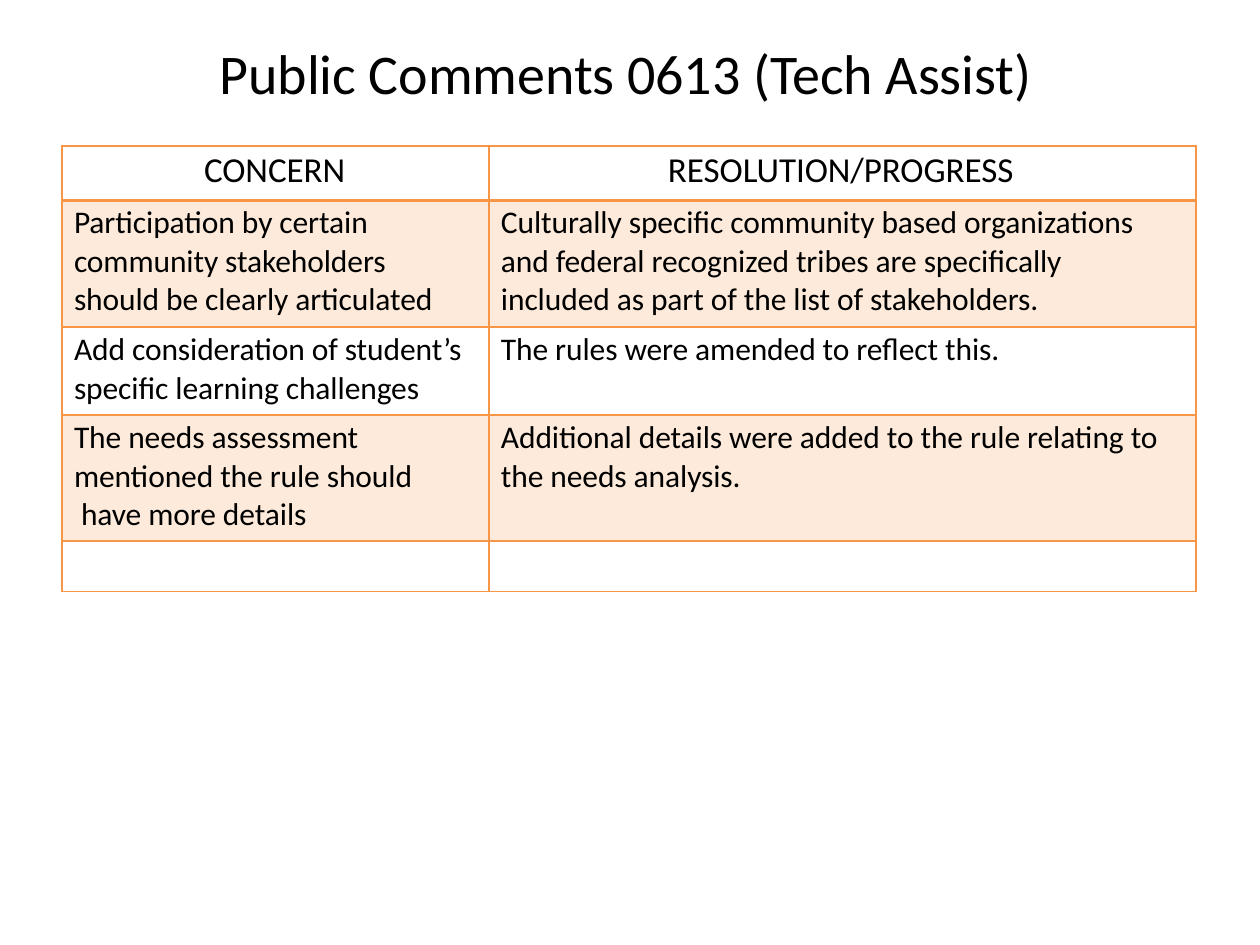
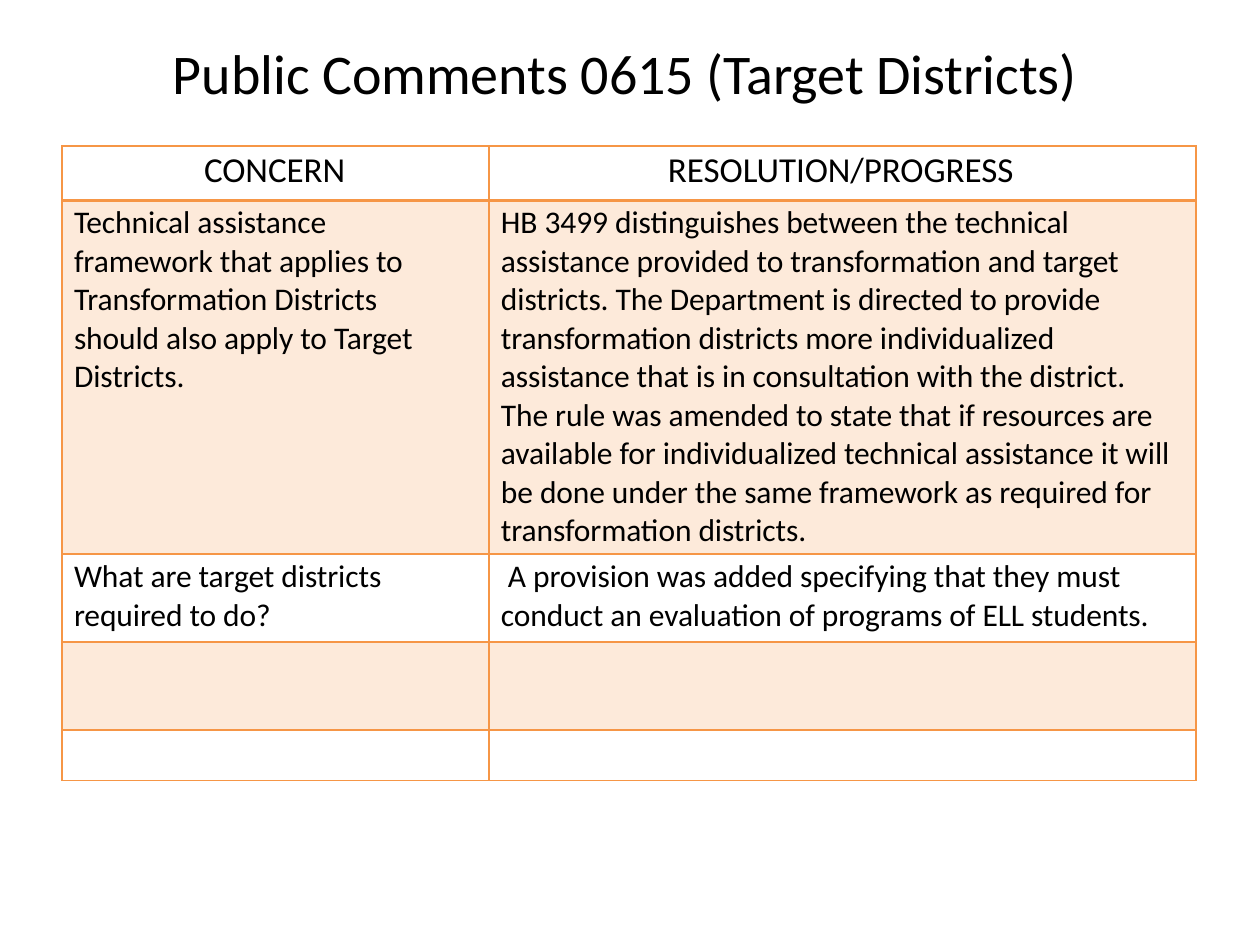
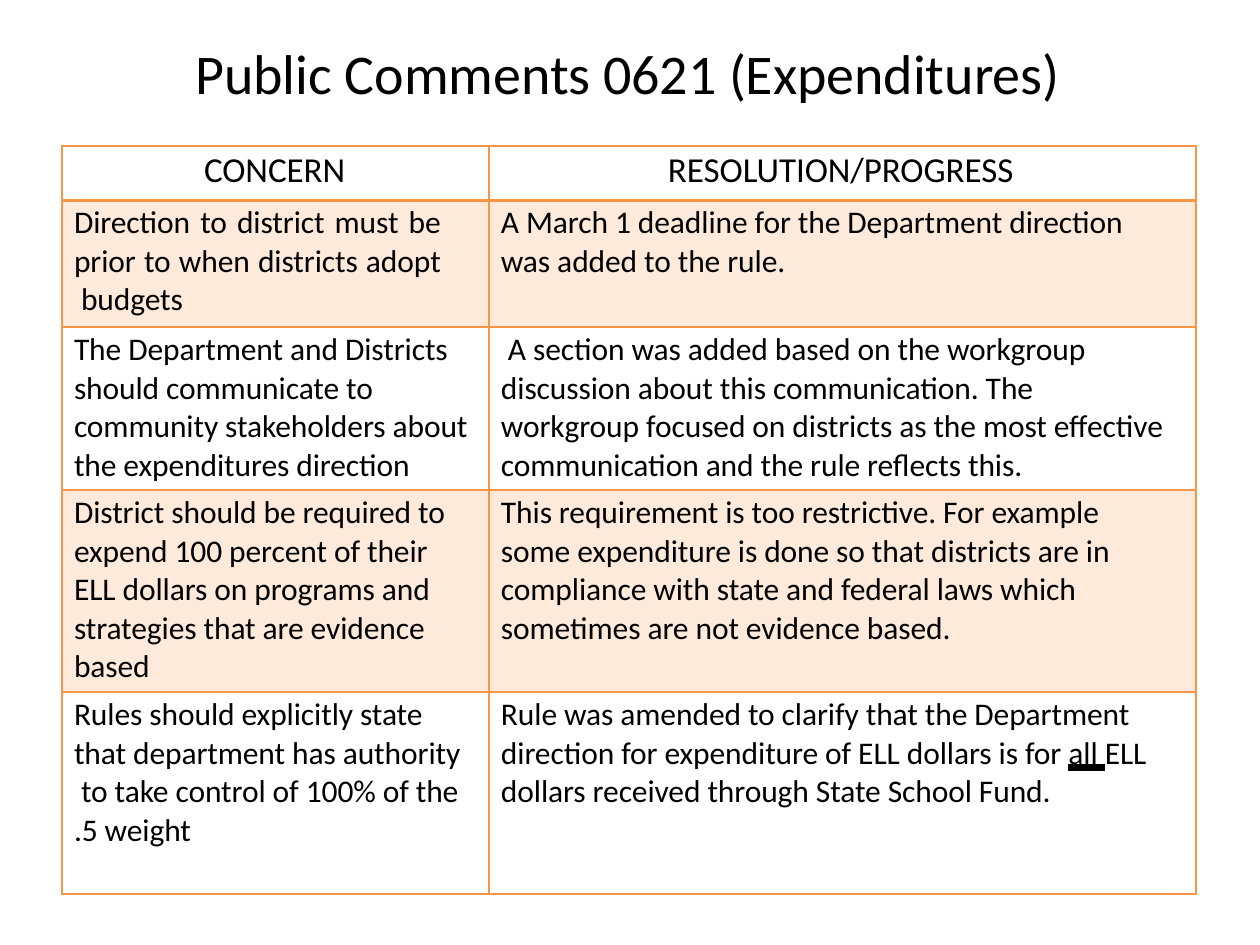
"""Build three slides of public comments, each a title above a concern and resolution table."""
import dataclasses

import pptx
import pptx.dml.color
import pptx.enum.text
import pptx.oxml.ns
import pptx.util
from lxml import etree


@dataclasses.dataclass
class Comment:
    text: str = ""
    first_indent: int = 0
    right_indent: int = 0
    align: object = None


HEADINGS = [("CONCERN", 142), ("RESOLUTION/PROGRESS", 179)]
EMPTY = (Comment(), Comment())
SLIDES = [
    {
        "title": "Public Comments 0613 (Tech Assist)",
        "title_width": 823,
        "row_heights": [126, 88, 126, 50],
        "rows": [
            (Comment("Participation by certain\vcommunity stakeholders\vshould be clearly articulated"),
             Comment("Culturally specific community based organizations\v"
                     "and federal recognized tribes are specifically\v"
                     "included as part of the list of stakeholders.")),
            (Comment("Add consideration of student’s\vspecific learning challenges"),
             Comment("The rules were amended to reflect this.")),
            (Comment("The needs assessment\vmentioned the rule should\v have more details"),
             Comment("Additional details were added to the rule relating to\vthe needs analysis.")),
            EMPTY,
        ],
    },
    {
        "title": "Public Comments 0615 (Target Districts)",
        "title_width": 916,
        "row_heights": [353, 88, 88, 50],
        "rows": [
            (Comment("Technical assistance\vframework that applies to\vTransformation Districts\v"
                     "should also apply to Target\vDistricts."),
             Comment("HB 3499 distinguishes between the technical\v"
                     "assistance provided to transformation and target\v"
                     "districts. The Department is directed to provide\v"
                     "transformation districts more individualized\v"
                     "assistance that is in consultation with the district.\v"
                     "The rule was amended to state that if resources are\v"
                     "available for individualized technical assistance it will\v"
                     "be done under the same framework as required for\v"
                     "transformation districts.")),
            (Comment("What are target districts\vrequired to do?"),
             Comment("A provision was added specifying that they must\v"
                     "conduct an evaluation of programs of ELL students.", first_indent=7)),
            EMPTY,
            EMPTY,
        ],
    },
    {
        "title": "Public Comments 0621 (Expenditures)",
        "title_width": 871,
        "row_heights": [126, 163, 202, 202],
        "rows": [
            (Comment("Direction to district must be\vprior to when districts adopt\v budgets",
                     right_indent=48, align=pptx.enum.text.PP_ALIGN.JUSTIFY),
             Comment("A March 1 deadline for the Department direction\vwas added to the rule.")),
            (Comment("The Department and Districts\vshould communicate to\v"
                     "community stakeholders about\vthe expenditures direction"),
             Comment("A section was added based on the workgroup\v"
                     "discussion about this communication. The\v"
                     "workgroup focused on districts as the most effective\v"
                     "communication and the rule reflects this.", first_indent=7)),
            (Comment("District should be required to\vexpend 100 percent of their\v"
                     "ELL dollars on programs and\vstrategies that are evidence\vbased"),
             Comment("This requirement is too restrictive. For example\v"
                     "some expenditure is done so that districts are in\v"
                     "compliance with state and federal laws which\v"
                     "sometimes are not evidence based.")),
            (Comment("Rules should explicitly state\vthat department has authority\v"
                     " to take control of 100% of the\n.5 weight"),
             Comment("Rule was amended to clarify that the Department\v"
                     "direction for expenditure of ELL dollars is for *all *ELL\v"
                     "dollars received through State School Fund.")),
        ],
    },
]

COLORS = {"text": "000000", "accent": "F69646"}
FONT = "Calibri"
LETTER_SPACING = "-5"
TITLE_SIZE, HEADING_SIZE, BODY_SIZE = 32, 20, 18
SLIDE_WIDTH, SLIDE_HEIGHT = 1260, 945
TITLE_TOP, TITLE_HEIGHT = 38, 69
TABLE_LEFT, TABLE_TOP = 62, 146
COLUMN_WIDTHS = [427, 707]
HEADING_HEIGHT = 55
BODY_INDENT = 12


def px(length):
    return pptx.util.Emu(round(length * 914400 / 126))


def write(frame, text, size, indent, first_indent=0, right_indent=0, align=None):
    """Fill a frame; newlines part paragraphs, asterisks enclose underlined words."""
    for number, content in enumerate(text.split("\n")):
        paragraph = frame.add_paragraph() if number else frame.paragraphs[0]
        properties = paragraph._p.get_or_add_pPr()
        properties.set("marL", str(px(indent)))
        properties.set("marR", str(px(right_indent)))
        properties.set("indent", str(px(first_indent)))
        paragraph.alignment = align
        for line_number, line in enumerate(content.split("\v")):
            if line_number:
                paragraph.add_line_break()
            for part_number, part in enumerate(line.split("*")):
                run = paragraph.add_run()
                run.text = part
                run.font.name = FONT
                run.font.size = pptx.util.Pt(size)
                run.font.color.rgb = pptx.dml.color.RGBColor.from_string(COLORS["text"])
                run._r.get_or_add_rPr().set("spc", LETTER_SPACING)
                if part_number % 2:
                    run.font.underline = pptx.enum.text.MSO_UNDERLINE.HEAVY_LINE


def style_cell(cell, shaded, top_width, bottom_width):
    if shaded:
        cell.fill.solid()
        cell.fill.fore_color.rgb = pptx.dml.color.RGBColor.from_string(COLORS["accent"])
    else:
        cell.fill.background()
    properties = cell._tc.get_or_add_tcPr()
    qn = pptx.oxml.ns.qn
    if shaded:
        color = properties.find(qn("a:solidFill")).find(qn("a:srgbClr"))
        etree.SubElement(color, qn("a:alpha"), val="20000")
    sides = [("L", 1), ("R", 1), ("T", top_width), ("B", bottom_width)]
    for position, (side, width) in enumerate(sides):
        border = etree.Element(qn("a:ln" + side), w=str(pptx.util.Pt(width)))
        fill = etree.SubElement(border, qn("a:solidFill"))
        etree.SubElement(fill, qn("a:srgbClr"), val=COLORS["accent"])
        properties.insert(position, border)


def set_margins(cell, top):
    cell.margin_left = cell.margin_right = cell.margin_bottom = 0
    cell.margin_top = px(top)


def add_title(slide, text, width):
    left = (SLIDE_WIDTH - width) / 2
    title = slide.shapes.add_textbox(px(left), px(TITLE_TOP), px(width), px(TITLE_HEIGHT))
    frame = title.text_frame
    frame.word_wrap = True
    frame.margin_left = frame.margin_top = frame.margin_right = frame.margin_bottom = 0
    write(frame, text, TITLE_SIZE, 1)


def add_comments(slide, rows, row_heights):
    heights = [HEADING_HEIGHT] + row_heights
    table = slide.shapes.add_table(
        len(heights), len(COLUMN_WIDTHS), px(TABLE_LEFT), px(TABLE_TOP),
        px(sum(COLUMN_WIDTHS)), px(sum(heights))).table
    table.first_row = table.horz_banding = False
    for column, width in zip(table.columns, COLUMN_WIDTHS):
        column.width = px(width)
    for row, height in zip(table.rows, heights):
        row.height = px(height)
    for column, (heading, indent) in enumerate(HEADINGS):
        cell = table.cell(0, column)
        set_margins(cell, 3)
        write(cell.text_frame, heading, HEADING_SIZE, indent)
        style_cell(cell, False, 1, 2)
    for row, comments in enumerate(rows, 1):
        for column, comment in enumerate(comments):
            cell = table.cell(row, column)
            if comment.text:
                set_margins(cell, 3 if row == 1 else 4)
                write(cell.text_frame, comment.text, BODY_SIZE, BODY_INDENT,
                      comment.first_indent, comment.right_indent, comment.align)
            style_cell(cell, row % 2 == 1, 2 if row == 1 else 1, 1)


def main():
    deck = pptx.Presentation()
    deck.slide_width, deck.slide_height = px(SLIDE_WIDTH), px(SLIDE_HEIGHT)
    for content in SLIDES:
        slide = deck.slides.add_slide(deck.slide_layouts[6])
        add_title(slide, content["title"], content["title_width"])
        add_comments(slide, content["rows"], content["row_heights"])
    deck.save("out.pptx")


if __name__ == "__main__":
    main()
